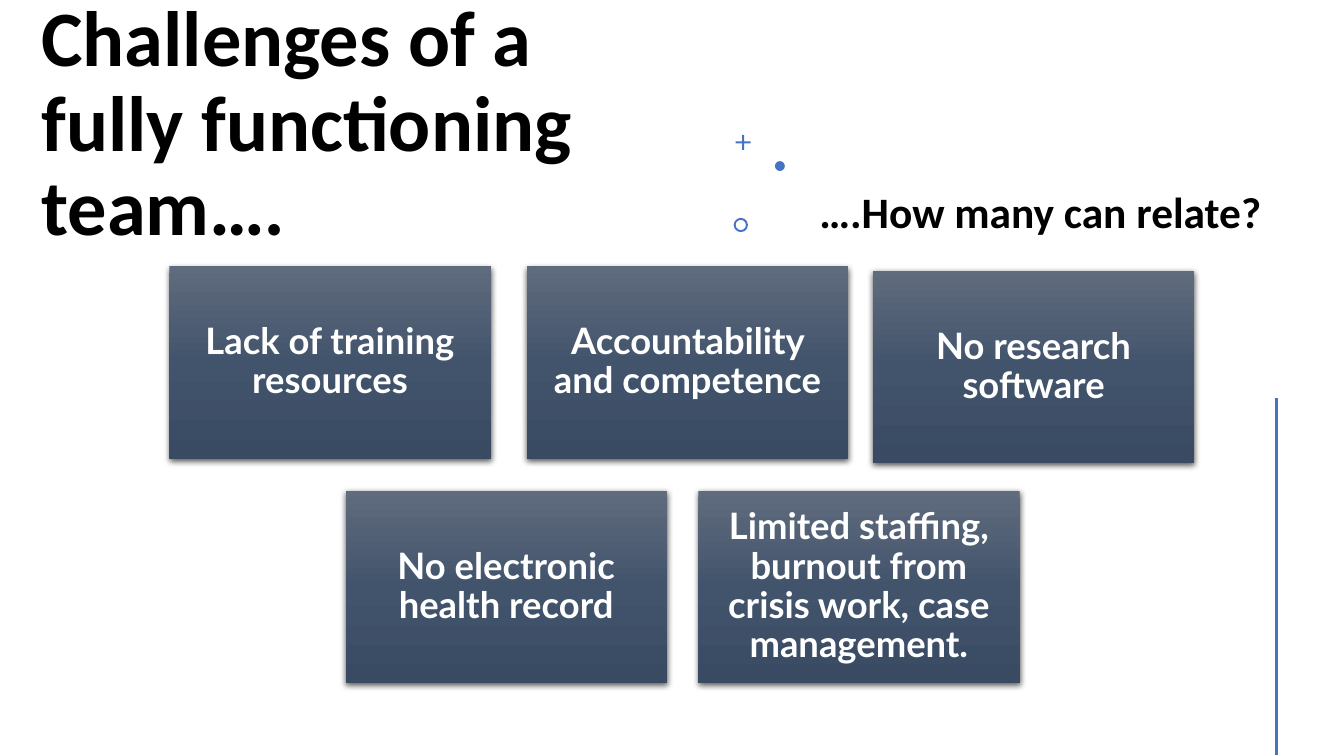
"""Build the slide on the challenges of a fully functioning team."""
import copy
import dataclasses

import pptx
import pptx.dml.color
import pptx.enum.shapes
import pptx.enum.text
import pptx.oxml
import pptx.oxml.ns
import pptx.util

Cm = pptx.util.Cm
Pt = pptx.util.Pt
RGB = pptx.dml.color.RGBColor.from_string
SHAPES = pptx.enum.shapes.MSO_SHAPE
ALIGN = pptx.enum.text.PP_ALIGN
ANCHOR = pptx.enum.text.MSO_ANCHOR


@dataclasses.dataclass(frozen=True)
class Theme:
    """Colours, fonts and type sizes of the slide."""
    ink: str = "000000"
    accent: str = "4472C4"
    card_ink: str = "FFFFFF"
    card_stops: tuple = ((0, "606B7D"), (0.5, "42546C"), (1, "394A62"))
    heading_font: str = "Calibri"
    card_font: str = "Lato"
    title_size: int = 56
    remark_size: int = 31
    card_size: int = 26
    rule_width: int = 2


THEME = Theme()
CARD_WIDTH, CARD_HEIGHT = 8.1, 4.85
CHALLENGES = (
    ("Lack of training resources", 4.27, 6.71),
    ("Accountability and competence", 13.28, 6.71),
    ("No research software", 22, 6.83),
    ("No electronic health record", 8.71, 12.37),
    ("Limited staffing, burnout from crisis work, case management.", 17.6, 12.37),
)
ORNAMENTS = (
    (SHAPES.CROSS, 18.54, 3.4, 0.38, 0.43),
    (SHAPES.OVAL, 19.53, 4.06, 0.25, None),
    (SHAPES.DONUT, 18.49, 5.49, 0.36, 0.14),
)


def format_text(frame, font, size, color, align, anchor, spacing):
    """Format every run and paragraph of a text frame in bold."""
    frame.word_wrap = True
    frame.auto_size = pptx.enum.text.MSO_AUTO_SIZE.NONE
    frame.vertical_anchor = anchor
    for paragraph in frame.paragraphs:
        paragraph.alignment = align
        paragraph.line_spacing = spacing
        for run in paragraph.runs:
            run.font.name = font
            run.font.size = Pt(size)
            run.font.bold = True
            run.font.color.rgb = RGB(color)


def add_title(slide):
    """Place the title with its slanted last dot."""
    title = slide.shapes.title
    title.left, title.top, title.width, title.height = Cm(0.79), Cm(0), Cm(16.89), Cm(6.5)
    frame = title.text_frame
    frame.text = "Challenges of a fully functioning team…"
    last_dot = frame.paragraphs[0].add_run()
    last_dot.text = "."
    last_dot.font.italic = True
    frame.margin_right = Cm(1)
    format_text(frame, THEME.heading_font, THEME.title_size, THEME.ink,
                ALIGN.LEFT, ANCHOR.BOTTOM, 0.9)


def add_remark(slide):
    """Add the closing question beside the title."""
    remark = slide.shapes.add_textbox(Cm(20.4), Cm(4.75), Cm(20.14), Cm(1.4))
    frame = remark.text_frame
    frame.text = "….How many can relate?"
    frame.paragraphs[0].space_after = Pt(6)
    format_text(frame, THEME.heading_font, THEME.remark_size, THEME.ink,
                ALIGN.LEFT, ANCHOR.MIDDLE, 0.8)


def add_ornament(slide, kind, left, top, size, thickness):
    """Add one small accent mark."""
    ornament = slide.shapes.add_shape(kind, Cm(left), Cm(top), Cm(size), Cm(size))
    ornament.shadow.inherit = False
    ornament.fill.solid()
    ornament.fill.fore_color.rgb = RGB(THEME.accent)
    ornament.line.fill.background()
    if thickness is not None:
        ornament.adjustments[0] = thickness


def add_rule(slide):
    """Add the vertical rule at the right edge."""
    rule = slide.shapes.add_connector(
        pptx.enum.shapes.MSO_CONNECTOR.STRAIGHT, Cm(32.16), Cm(10.03), Cm(32.16), Cm(19.02))
    rule.line.color.rgb = RGB(THEME.accent)
    rule.line.width = Pt(THEME.rule_width)
    rule.element.spPr.append(pptx.oxml.parse_xml(
        f'<a:effectLst {pptx.oxml.ns.nsdecls("a")}/>'))


def shade_card(card):
    """Give a card its downward gradient."""
    card.fill.gradient()
    card.fill.gradient_angle = 270
    stop_list = card.element.spPr.find(".//" + pptx.oxml.ns.qn("a:gsLst"))
    stop_list.append(copy.deepcopy(stop_list[-1]))
    for stop, (position, color) in zip(card.fill.gradient_stops, THEME.card_stops):
        stop.position = position
        stop.color.rgb = RGB(color)


def drop_shadow(card):
    """Give a card a soft shadow below it."""
    card.shadow.inherit = False
    effects = card.element.spPr.find(pptx.oxml.ns.qn("a:effectLst"))
    effects.append(pptx.oxml.parse_xml(
        f'<a:outerShdw {pptx.oxml.ns.nsdecls("a")} blurRad="{Pt(4.5)}" dist="{Pt(1.5)}" '
        'dir="5400000" algn="ctr" rotWithShape="0">'
        f'<a:srgbClr val="{THEME.ink}"><a:alpha val="63000"/></a:srgbClr></a:outerShdw>'))


def add_card(slide, challenge, left, top):
    """Add one challenge card."""
    card = slide.shapes.add_shape(
        SHAPES.RECTANGLE, Cm(left), Cm(top), Cm(CARD_WIDTH), Cm(CARD_HEIGHT))
    card.line.fill.background()
    shade_card(card)
    drop_shadow(card)
    frame = card.text_frame
    frame.text = challenge
    frame.margin_left = frame.margin_right = Cm(0.28)
    frame.margin_top = frame.margin_bottom = Cm(0.28)
    format_text(frame, THEME.card_font, THEME.card_size, THEME.card_ink,
                ALIGN.CENTER, ANCHOR.MIDDLE, 0.9)


def main():
    """Build and save the slide."""
    deck = pptx.Presentation()
    deck.slide_width, deck.slide_height = Cm(33.87), Cm(19.05)
    slide = deck.slides.add_slide(deck.slide_layouts.get_by_name("Title Only"))
    add_title(slide)
    for ornament in ORNAMENTS:
        add_ornament(slide, *ornament)
    add_remark(slide)
    add_rule(slide)
    for challenge in CHALLENGES:
        add_card(slide, *challenge)
    deck.save("out.pptx")


if __name__ == "__main__":
    main()
